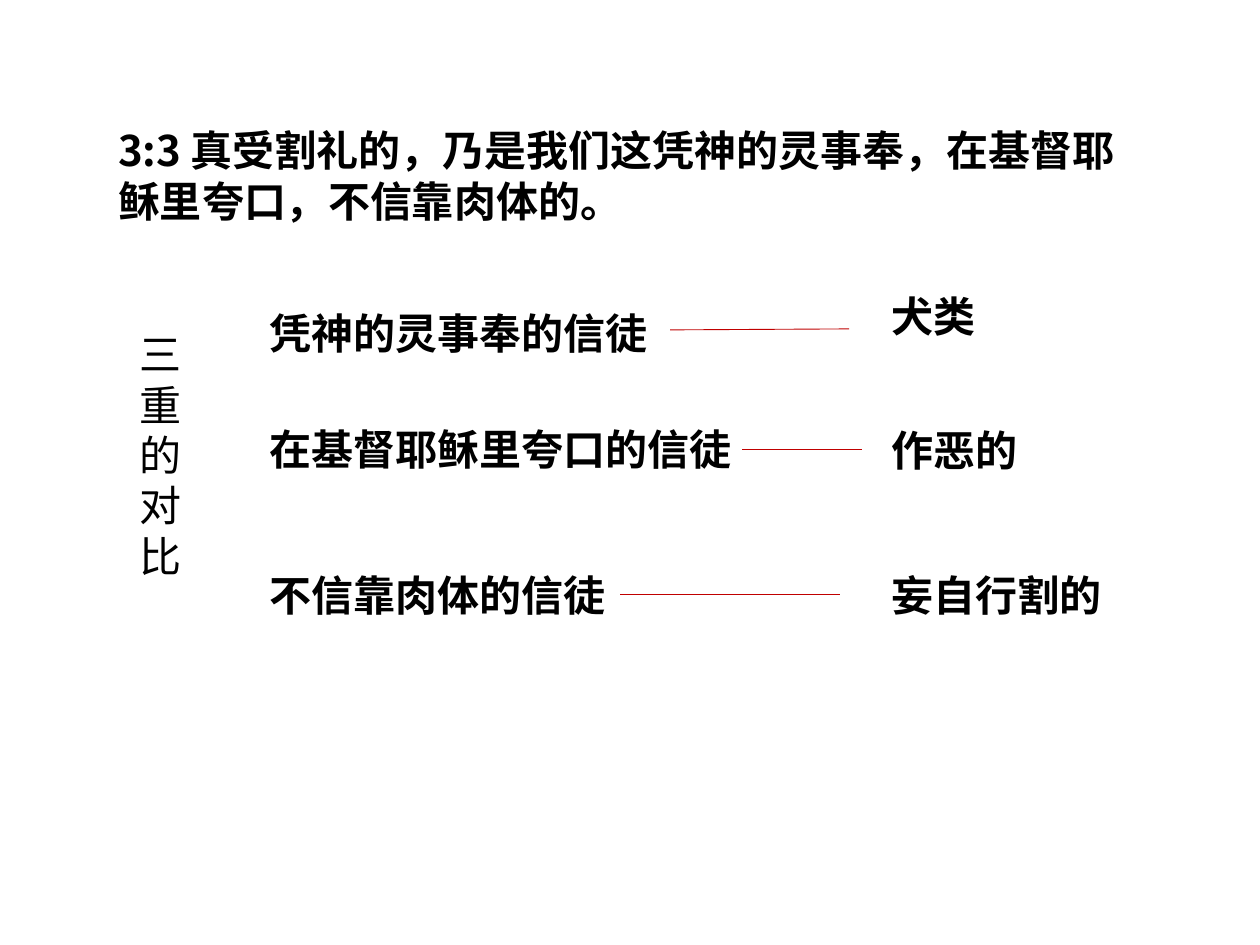
from dataclasses import dataclass

from lxml import etree
from pptx import Presentation
from pptx import util as u
from pptx.dml.color import RGBColor
from pptx.enum import shapes, text
from pptx.oxml import ns


@dataclass(frozen=True)
class Theme:
    ink: RGBColor = RGBColor(0, 0, 0)
    rule: RGBColor = RGBColor(0xC0, 0, 0)
    size: u.Pt = u.Pt(24)
    rule_width: u.Pt = u.Pt(0.5)
    cjk: str = "Noto Sans CJK SC"
    latin: str = "Calibri"


THEME = Theme()
LINE_HEIGHT = 1.27


def add_text(page, box, words, font, bold=True, wrap=True):
    label = page.shapes.add_textbox(*map(u.Cm, box))
    frame = label.text_frame
    frame.word_wrap = wrap
    frame.auto_size = text.MSO_AUTO_SIZE.SHAPE_TO_FIT_TEXT
    span = frame.paragraphs[0].add_run()
    span.text = words
    span.font.color.rgb = THEME.ink
    for name, value in {"size": THEME.size, "bold": bold, "name": font}.items():
        setattr(span.font, name, value)
    east_asian = etree.SubElement(span.font._element, ns.qn("a:ea"))
    east_asian.set("typeface", THEME.cjk)


def add_rule(page, start, end):
    rule = page.shapes.add_connector(
        shapes.MSO_CONNECTOR.STRAIGHT, *map(u.Cm, (*start, *end)))
    rule.line.color.rgb = THEME.rule
    rule.line.width = THEME.rule_width
    etree.SubElement(rule._element.spPr, ns.qn("a:effectLst"))


def add_verse(page, box):
    add_text(page, box, "3:3 真受割礼的，乃是我们这凭神的灵事奉，在基督耶稣里夸口，不信靠肉体的。",
             THEME.cjk)


def add_side_title(page, box):
    add_text(page, box, "三重的对比", THEME.cjk, bold=False)


def add_contrasts(page, box, contrasts):
    left, top, width, _ = box
    right_column = left + 12.55
    for believer, opposite, believer_y, opposite_y, rule_start, rule_end in contrasts:
        add_text(page, (left, top + believer_y, 0.5 + 0.85 * len(believer), LINE_HEIGHT),
                 believer, THEME.latin, wrap=False)
        add_text(page, (right_column, top + opposite_y, width - 12.55, LINE_HEIGHT),
                 opposite, THEME.latin)
        add_rule(page, *((left + x, top + y) for x, y in (rule_start, rule_end)))


def main():
    deck = Presentation()
    deck.slide_width, deck.slide_height = u.Cm(25.4), u.Cm(19.05)
    page = deck.slides.add_slide(deck.slide_layouts[6])
    add_verse(page, (2.13, 2.39, 20.8, 2.31))
    add_side_title(page, (2.57, 6.5, 1.22, 5.38))
    add_contrasts(page, (5.18, 5.74, 17.93, 6.88), (
        ("凭神的灵事奉的信徒", "犬类", 0.33, 0, (8.33, 0.91), (11.94, 0.89)),
        ("在基督耶稣里夸口的信徒", "作恶的", 2.67, 2.69, (9.78, 3.33), (12.19, 3.33)),
        ("不信靠肉体的信徒", "妄自行割的", 5.61, 5.61, (7.32, 6.25), (11.76, 6.25)),
    ))
    deck.save("out.pptx")


if __name__ == "__main__":
    main()
